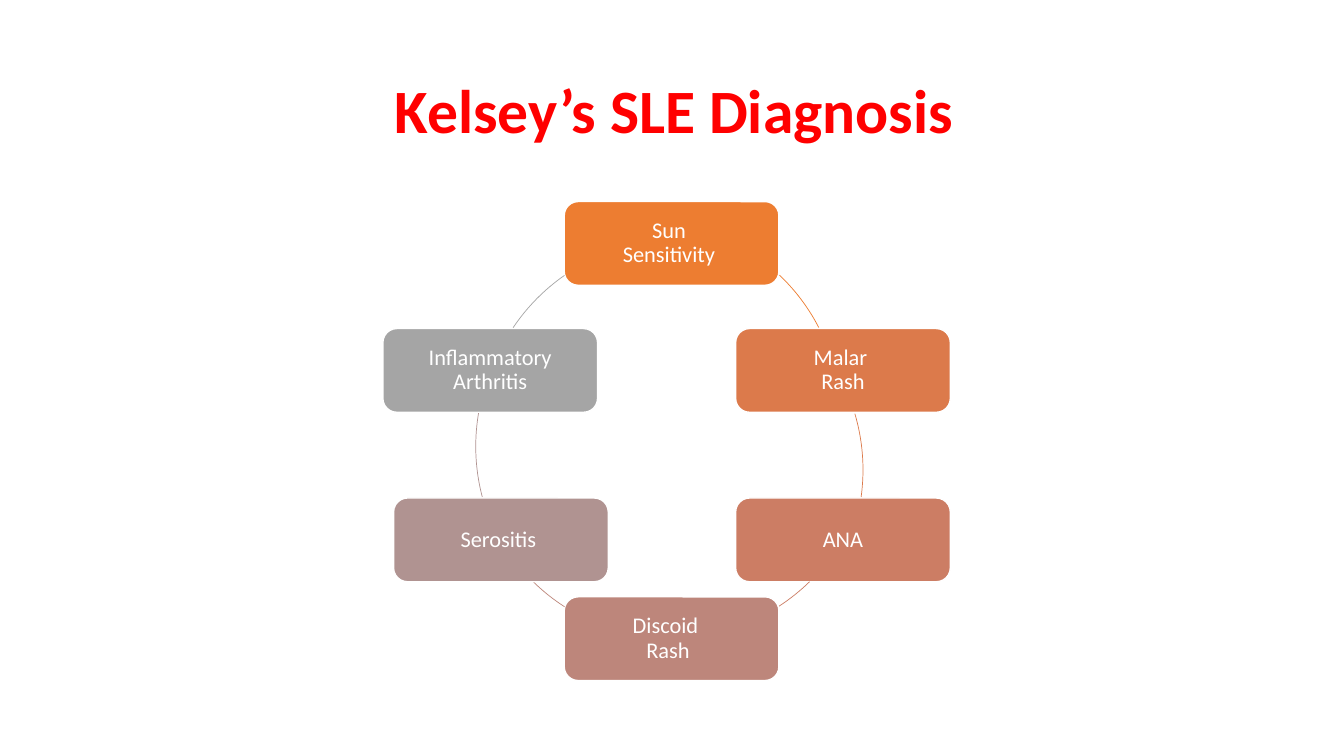
from dataclasses import dataclass

from pptx import Presentation
from pptx.dml.color import RGBColor
from pptx.enum.shapes import MSO_SHAPE
from pptx.enum.text import MSO_ANCHOR, PP_ALIGN
from pptx.util import Cm, Pt


@dataclass(frozen=True)
class Theme:
    font: str = "Calibri"
    title: str = "FF0000"
    light: str = "FFFFFF"
    nodes: tuple = ("ED7D31", "DC7A4B", "CC7D64", "BD867B", "B09391", "A5A5A5")
    head: int = 44
    body: int = 16
    edge: float = 1
    ring: float = 0.5


THEME = Theme()
WIDTH, HEIGHT = 5.41, 2.11
RING = 9.96
PAD = 0.18

# Text, left, top, left inset
NODES = [
    ("Sun \nSensitivity ", 14.22, 5.08, PAD),
    ("Malar \nRash", 18.54, 8.28, PAD),
    ("ANA", 18.54, 12.55, PAD),
    ("Discoid \nRash", 14.22, 15.04, 0),
    ("Serositis ", 9.92, 12.55, PAD),
    ("Inflammatory Arthritis", 9.65, 8.28, PAD),
]
# Left, top, start and end angle in degrees, clockwise from the right
ARCS = [
    (11.23, 5.56, 313.6, 332.7),
    (11.79, 6.86, 343.5, 7.9),
    (11.94, 6.12, 45.6, 57),
    (11.94, 6.12, 122.7, 134.2),
    (11.99, 6.27, 165.2, 189.7),
    (12.09, 6.05, 213.8, 235.2),
]


def write(shape, text, size, color, bold=False, left=PAD, pad=PAD):
    frame = shape.text_frame
    frame.word_wrap = True
    frame.vertical_anchor = MSO_ANCHOR.MIDDLE
    frame.margin_left = Cm(left)
    frame.margin_top = frame.margin_right = frame.margin_bottom = Cm(pad)
    frame.text = text
    for para in frame.paragraphs:
        para.alignment = PP_ALIGN.CENTER
        para.line_spacing = 0.9
        font = para.runs[0].font
        font.name, font.size, font.bold = THEME.font, Pt(size), bold
        font.color.rgb = RGBColor.from_string(color)


def place(slide, kind, box, line, width):
    """Add a preset shape with an outline and no shadow."""
    shape = slide.shapes.add_shape(kind, *map(Cm, box))
    shape.shadow.inherit = False
    shape.line.color.rgb = RGBColor.from_string(line)
    shape.line.width = Pt(width)
    return shape


def add_node(slide, color, text, left, top, inset):
    box = (left, top, WIDTH, HEIGHT)
    node = place(slide, MSO_SHAPE.ROUNDED_RECTANGLE, box, THEME.light, THEME.edge)
    node.fill.solid()
    node.fill.fore_color.rgb = RGBColor.from_string(color)
    write(node, text, THEME.body, THEME.light, left=inset)


def add_arc(slide, color, left, top, start, end):
    arc = place(slide, MSO_SHAPE.ARC, (left, top, RING, RING), color, THEME.ring)
    arc.fill.background()
    # Angles are stored in 1/60000 degree, adjustments in 1/100000
    for index, angle in enumerate((start, end)):
        arc.adjustments[index] = angle * 0.6


def add_title(slide, text):
    title = slide.shapes.title
    title.left, title.top = Cm(2.33), Cm(1.01)
    title.width, title.height = Cm(29.21), Cm(3.68)
    write(title, text, THEME.head, THEME.title, bold=True, left=0.25, pad=0.13)


def main():
    deck = Presentation()
    deck.slide_width, deck.slide_height = Cm(33.87), Cm(19.05)
    slide = deck.slides.add_slide(deck.slide_layouts[5])
    add_title(slide, "Kelsey’s SLE Diagnosis")
    for color, node, arc in zip(THEME.nodes, NODES, ARCS):
        add_node(slide, color, *node)
        add_arc(slide, color, *arc)
    deck.save("out.pptx")


if __name__ == "__main__":
    main()
